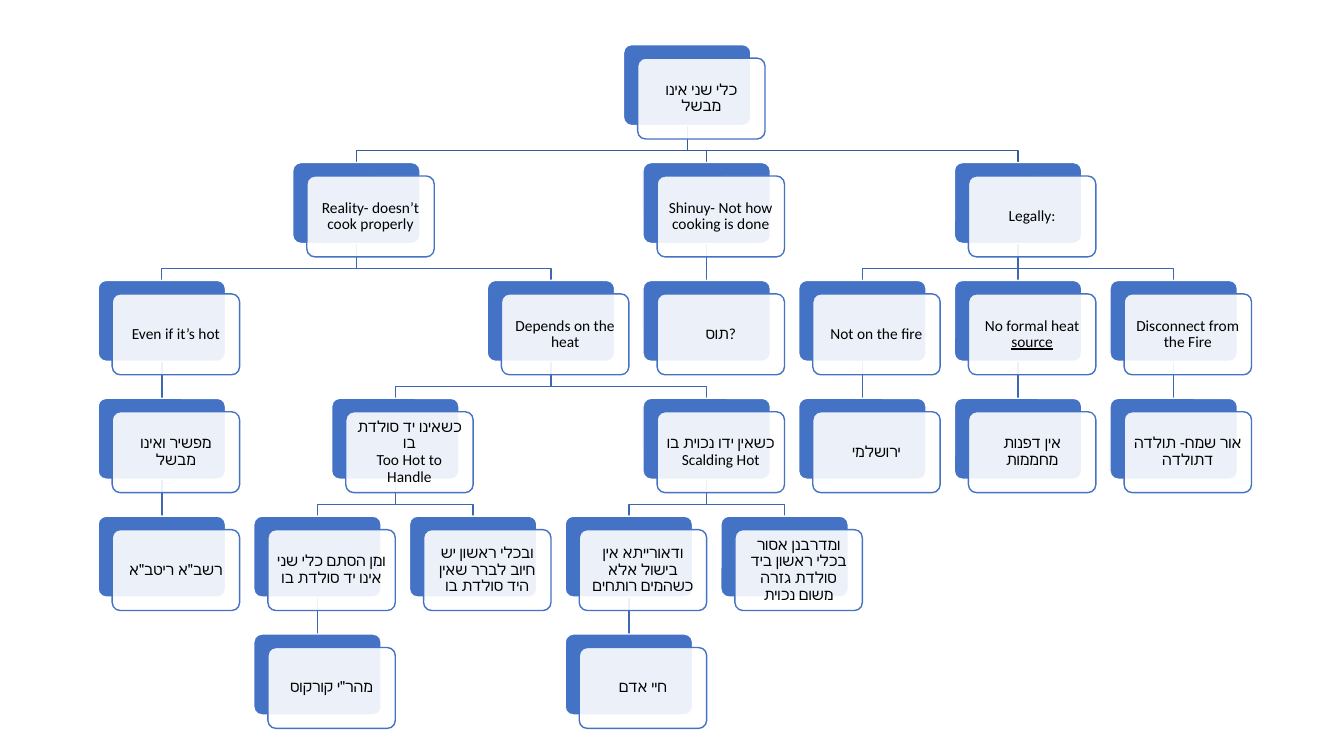
import copy

import pptx
import pptx.dml.color
import pptx.enum.shapes
import pptx.enum.text
import pptx.oxml
import pptx.oxml.ns
import pptx.util

Pt = pptx.util.Pt

# (text, children); a box without children gives its column instead.
# Text after "_" is underlined.
TREE = ("כלי שני אינו מבשל", [
    ("Reality- doesn’t cook properly", [
        ("Even if it’s hot", [
            ("מפשיר ואינו מבשל", [
                ("רשב\"א ריטב\"א", 0)])]),
        ("Depends on the heat", [
            ("כשאינו יד סולדת בו\nToo Hot to Handle", [
                ("ומן הסתם כלי שני אינו יד סולדת בו", [
                    ("מהר\"י קורקוס", 1)]),
                ("ובכלי ראשון יש חיוב לברר שאין היד סולדת בו", 2)]),
            ("כשאין ידו נכוית בו\nScalding Hot", [
                ("ודאורייתא אין בישול אלא כשהמים רותחים", [
                    ("חיי אדם", 3)]),
                ("ומדרבנן אסור בכלי ראשון ביד סולדת גזרה משום נכוית", 4)])])]),
    ("Shinuy- Not how cooking is done", [
        ("תוס?", 3.5)]),
    ("Legally:", [
        ("Not on the fire", [
            ("ירושלמי", 4.5)]),
        ("No formal heat _source", [
            ("אין דפנות מחממות", 5.5)]),
        ("Disconnect from the Fire", [
            ("אור שמח- תולדה דתולדה", 6.5)])])])

SLIDE_W, SLIDE_H = 960, 540
LEFT, TOP = 70.1, 31.9
COL_STEP, ROW_STEP = 111.2, 84.2
CARD_W, CARD_H = 91, 57.8
SHIFT_X, SHIFT_Y = 10.1, 9.6
BEND = 18
INSET = 3.3
BLUE, WHITE, BLACK = "4472C4", "FFFFFF", "000000"
ROOT_LINE, BRANCH_LINE = "365B9D", "3E67B2"
FONT = {"name": "Calibri", "size": Pt(11)}
FRAME = {"word_wrap": True, "vertical_anchor": pptx.enum.text.MSO_ANCHOR.MIDDLE,
         "margin_left": Pt(INSET), "margin_right": Pt(INSET),
         "margin_top": Pt(INSET), "margin_bottom": Pt(INSET)}
PARAGRAPH = {"alignment": pptx.enum.text.PP_ALIGN.CENTER, "line_spacing": 0.9}


def rgb(value):
    return pptx.dml.color.RGBColor.from_string(value)


def apply(target, values):
    for name, value in values.items():
        setattr(target, name, value)


def set_line(s, color):
    s.line.color.rgb = rgb(color)
    s.line.width = Pt(1)


def place(node, row=0):
    """Lay out a branch, each parent midway between its outer children."""
    text, below = node
    children = []
    column = below
    if isinstance(below, list):
        children = [place(child, row + 1) for child in below]
        column = (children[0]["column"] + children[-1]["column"]) / 2
    return {"text": text, "children": children, "column": column, "row": row,
            "x": LEFT + column * COL_STEP, "y": TOP + row * ROW_STEP}


def walk(box):
    yield box
    for child in box["children"]:
        yield from walk(child)


def add_link(shapes, parent, child):
    x1, x2 = (box["x"] + CARD_W / 2 for box in (parent, child))
    y1, y2 = parent["y"] + CARD_H, child["y"]
    if abs(x1 - x2) < 0.01:
        s = shapes.add_connector(pptx.enum.shapes.MSO_CONNECTOR.STRAIGHT,
                                 Pt(x1), Pt(y1), Pt(x2), Pt(y2))
        s._element.spPr.append(pptx.oxml.parse_xml(
            f"<a:effectLst {pptx.oxml.ns.nsdecls('a')}/>"))
    else:
        bend = y1 + BEND
        corners = [(x1, bend), (x2, bend), (x2, y2)]
        builder = shapes.build_freeform(Pt(x1), Pt(y1))
        builder.add_line_segments([(Pt(x), Pt(y)) for x, y in corners], close=False)
        s = builder.convert_to_shape()
        s.fill.background()
        s.shadow.inherit = False
    set_line(s, BRANCH_LINE if parent["row"] else ROOT_LINE)


def add_card(shapes, x, y, fill, line):
    s = shapes.add_shape(pptx.enum.shapes.MSO_SHAPE.ROUNDED_RECTANGLE,
                         Pt(x), Pt(y), Pt(CARD_W), Pt(CARD_H))
    s.adjustments[0] = 0.1
    s.shadow.inherit = False
    s.fill.solid()
    s.fill.fore_color.rgb = rgb(fill)
    set_line(s, line)
    return s


def write(s, text):
    tf = s.text_frame
    apply(tf, FRAME)
    p = tf.paragraphs[0]
    apply(p, PARAGRAPH)
    plain, _, underlined = text.partition("_")
    p.text = plain
    if underlined:
        r = p.add_run()
        r.text = underlined
        r.font.underline = True
    for r in p.runs:
        apply(r.font, FONT)
        r.font.color.rgb = rgb(BLACK)
    for br in p._p.findall(pptx.oxml.ns.qn("a:br")):
        br.append(copy.deepcopy(p.runs[0]._r.rPr))


def add_box(shapes, box):
    x, y = box["x"], box["y"]
    add_card(shapes, x, y, BLUE, WHITE)
    front = add_card(shapes, x + SHIFT_X, y + SHIFT_Y, WHITE, BLUE)
    color = front._element.spPr.find(".//" + pptx.oxml.ns.qn("a:srgbClr"))
    color.append(pptx.oxml.parse_xml(
        f"<a:alpha {pptx.oxml.ns.nsdecls('a')} val='90000'/>"))
    write(front, box["text"])


def main():
    prs = pptx.Presentation()
    prs.slide_width, prs.slide_height = Pt(SLIDE_W), Pt(SLIDE_H)
    shapes = prs.slides.add_slide(prs.slide_layouts[6]).shapes
    boxes = list(walk(place(TREE)))
    for box in boxes:
        for child in box["children"]:
            add_link(shapes, box, child)
    for box in boxes:
        add_box(shapes, box)
    prs.save("out.pptx")


if __name__ == "__main__":
    main()
